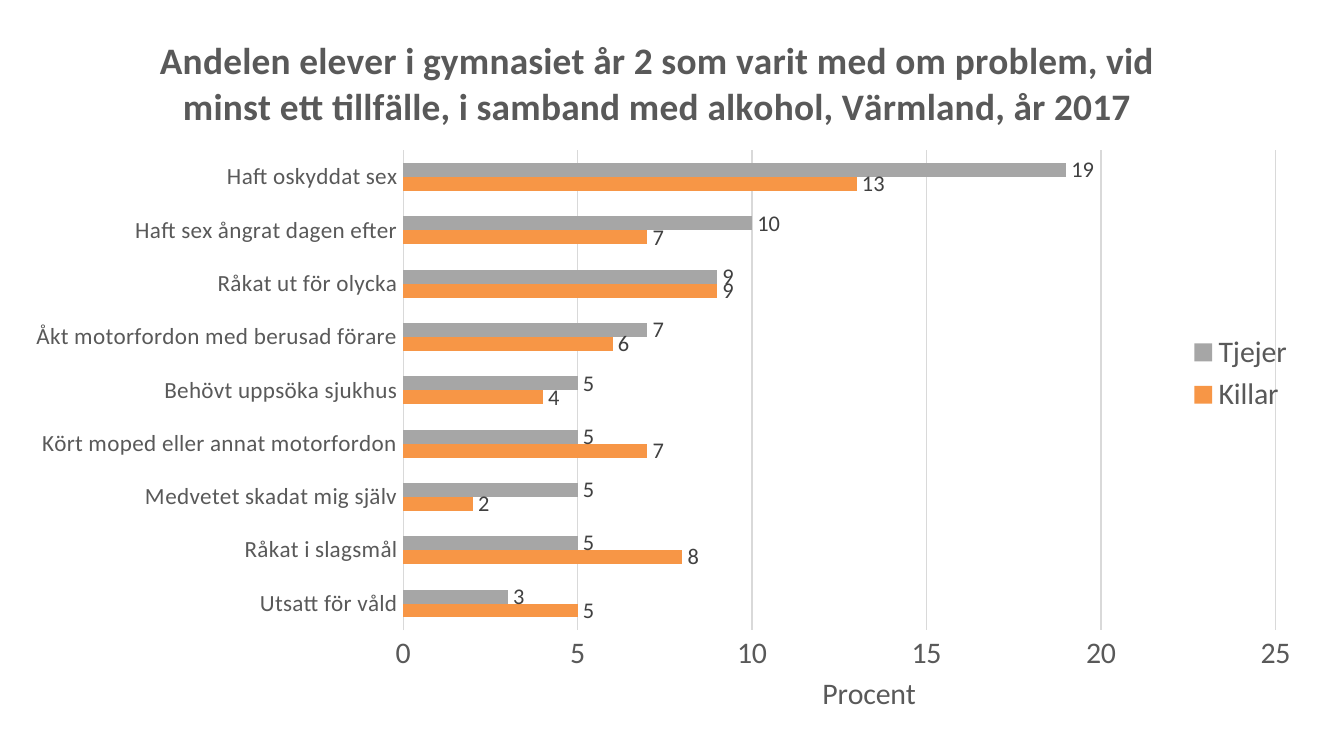
"""Build a slide with a bar chart of alcohol-related problems among pupils."""
from lxml import etree
from pptx import Presentation
from pptx import util as u
from pptx.chart.data import CategoryChartData
from pptx.dml.color import RGBColor
from pptx.enum import chart as ch
from pptx.oxml.ns import qn

TITLE = ("Andelen elever i gymnasiet år 2 som varit med om problem, vid "
         "minst ett tillfälle, i samband med alkohol, Värmland, år 2017")
AXIS_TITLE = "Procent"
ROWS = [
    ("Utsatt för våld", 5, 3),
    ("Råkat i slagsmål", 8, 5),
    ("Medvetet skadat mig själv", 2, 5),
    ("Kört moped eller annat motorfordon", 7, 5),
    ("Behövt uppsöka sjukhus", 4, 5),
    ("Åkt motorfordon med berusad förare", 6, 7),
    ("Råkat ut för olycka", 9, 9),
    ("Haft sex ångrat dagen efter", 7, 10),
    ("Haft oskyddat sex", 13, 19),
]
SERIES = ["Killar", "Tjejer"]
COLORS = {"Killar": "F79646", "Tjejer": "A6A6A6", "text": "595959",
          "label": "404040", "grid": "D9D9D9"}
CHART = (0.2, 0.14, 9.53, 5.28)
PLOT = (3, 1.12, 6.49, 3.57)
TITLE_AT = (1.14, 0.2)
AXIS_TITLE_AT = (6.08, 4.97)


def color(name):
    return RGBColor.from_string(COLORS[name])


def style_font(font, size, name="text", bold=False):
    font.name, font.size, font.bold = "Calibri", u.Pt(size), bold
    font.color.rgb = color(name)


def style_line(line):
    line.color.rgb = color("grid")
    line.width = u.Pt(0.75)


def place(parent, index, spot, inner=False):
    for old in parent.findall(qn("c:layout")):
        parent.remove(old)
    layout = etree.Element(qn("c:layout"))
    parent.insert(index, layout)
    manual = etree.SubElement(layout, qn("c:manualLayout"))
    left, top, width, height = CHART
    shifted = (spot[0] - left, spot[1] - top, *spot[2:])
    shares = [part / whole for part, whole in zip(shifted, (width, height) * 2)]
    settings = [("layoutTarget", "inner")] if inner else []
    settings += [("xMode", "edge"), ("yMode", "edge"), *zip("xywh", shares)]
    for tag, value in settings:
        etree.SubElement(manual, qn("c:" + tag)).set("val", str(value))


def set_title(owner, words, size, bold, spot):
    frame = owner.text_frame
    frame.text = words
    style_font(frame.paragraphs[0].font, size, bold=bold)
    place(owner._element, 1, spot)


def main():
    deck = Presentation()
    deck.slide_width = u.Inches(10)
    deck.slide_height = deck.slide_width * 9 // 16
    page = deck.slides.add_slide(deck.slide_layouts[6])

    names, *columns = zip(*ROWS)
    data = CategoryChartData(number_format="0")
    data.categories = names
    for name, values in zip(SERIES, columns):
        data.add_series(name, values)
    chart = page.shapes.add_chart(
        ch.XL_CHART_TYPE.BAR_CLUSTERED, *map(u.Inches, CHART), data).chart
    style_font(chart.font, 12)
    set_title(chart.chart_title, TITLE, 20, True, TITLE_AT)
    chart.chart_title.include_in_layout = False
    place(chart._chartSpace.find(".//" + qn("c:plotArea")), 0, PLOT, inner=True)

    chart.has_legend = True
    chart.legend.position = ch.XL_LEGEND_POSITION.RIGHT
    chart.legend.include_in_layout = False
    style_font(chart.legend.font, 16)

    plot = chart.plots[0]
    plot.gap_width, plot.overlap, plot.vary_by_categories = 182, 0, False
    for series in plot.series:
        series.format.fill.solid()
        series.format.fill.fore_color.rgb = color(series.name)
        labels = series.data_labels
        labels.show_value = True
        labels.position = ch.XL_LABEL_POSITION.OUTSIDE_END
        labels.number_format, labels.number_format_is_linked = "0", False
        style_font(labels.font, 12, "label")

    for axis, size in ((chart.category_axis, 12.4), (chart.value_axis, 16)):
        axis.major_tick_mark = axis.minor_tick_mark = ch.XL_TICK_MARK.NONE
        style_font(axis.tick_labels.font, size)
    style_line(chart.category_axis.format.line)
    scale = chart.value_axis
    scale.minimum_scale, scale.maximum_scale, scale.major_unit = 0, 25, 5
    scale.format.line.fill.background()
    scale.has_major_gridlines = True
    style_line(scale.major_gridlines.format.line)
    scale.tick_labels.number_format = "0"
    scale.tick_labels.number_format_is_linked = False
    set_title(scale.axis_title, AXIS_TITLE, 16, False, AXIS_TITLE_AT)

    deck.save("out.pptx")


if __name__ == "__main__":
    main()
